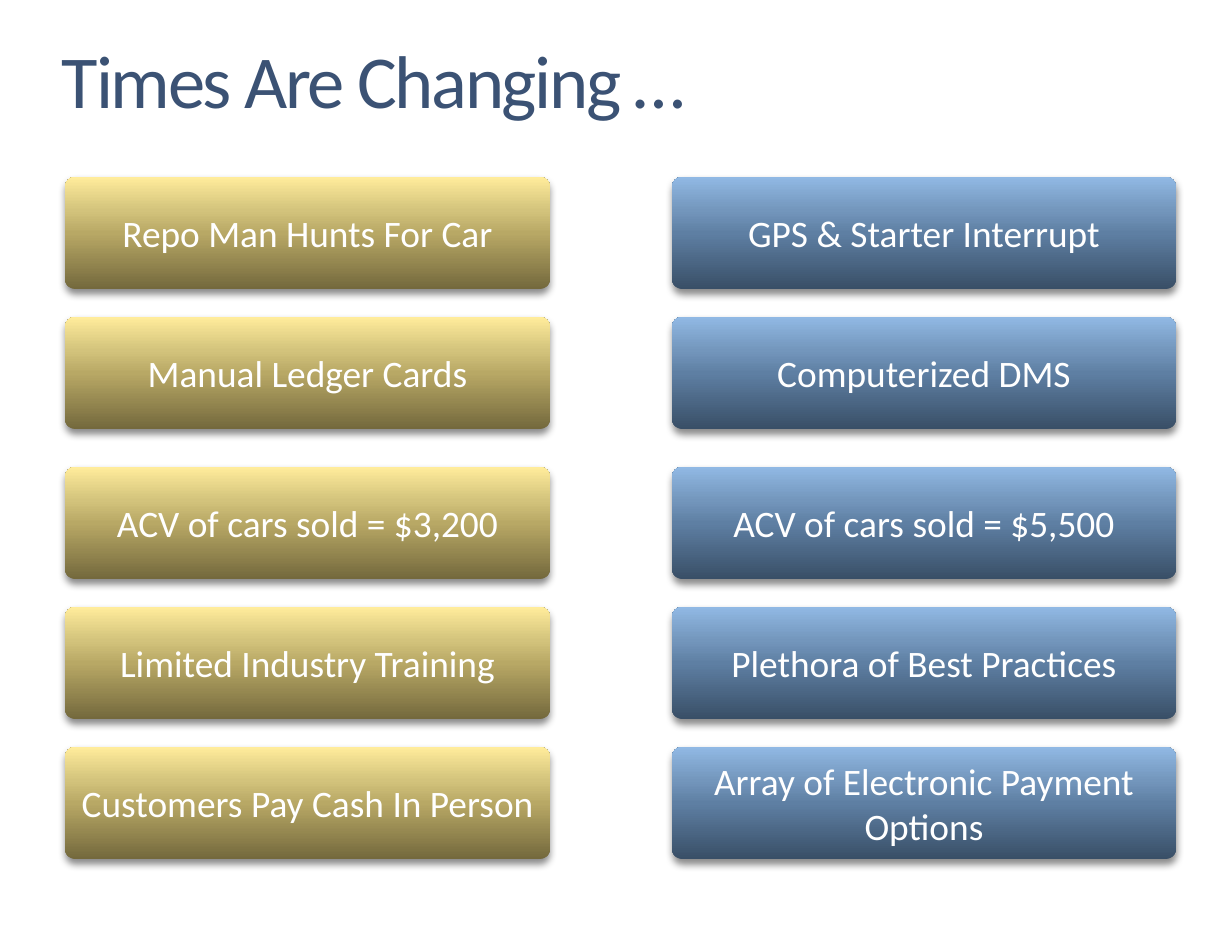
from lxml import etree
from pptx import Presentation
from pptx.dml.color import RGBColor
from pptx.enum.shapes import MSO_SHAPE
from pptx.enum.text import MSO_ANCHOR, MSO_AUTO_SIZE, PP_ALIGN
from pptx.oxml.ns import qn
from pptx.util import Pt

ROUNDED = MSO_SHAPE.ROUNDED_RECTANGLE
TOP, MIDDLE = MSO_ANCHOR.TOP, MSO_ANCHOR.MIDDLE
LEFT, CENTER = PP_ALIGN.LEFT, PP_ALIGN.CENTER
NO_AUTOFIT = MSO_AUTO_SIZE.NONE

SCALE = 914400 / 112
FONT = "Calibri"
STOPS = (0, 50, 70, 100)
GOLD = ("74693D", "B8A865", "D3C37C", "FFEC9B")
BLUE = ("394F67", "5E7FA3", "7396BC", "91B9E4")
ROW_H, PITCH, GROUP_GAP = 112, 140, 10

THEN = ("Repo Man Hunts For Car", "Manual Ledger Cards",
        "ACV of cars sold = $3,200", "Limited Industry Training",
        "Customers Pay Cash In Person")
NOW = ("GPS & Starter Interrupt", "Computerized DMS",
       "ACV of cars sold = $5,500", "Plethora of Best Practices",
       "Array of Electronic Payment Options")


def px(n):
    """Turn pixels into EMU."""
    return round(n * SCALE)


def rgb(value):
    """Turn a hex string into a colour."""
    return RGBColor.from_string(value)


def set_text(tf, text, size, color, align, anchor):
    """Write one formatted paragraph and return it."""
    tf.text = text
    tf.word_wrap = True
    tf.vertical_anchor = anchor
    p = tf.paragraphs[0]
    p.alignment = align
    font = p.runs[0].font
    font.name, font.size = FONT, Pt(size)
    font.color.rgb = rgb(color)
    return p


def add_color(parent, value):
    """Append an RGB colour element and return it."""
    return etree.SubElement(parent, qn("a:srgbClr"), val=value)


def set_gradient(sp, colors):
    """Fill a shape with a gradient rising from bottom to top."""
    sp.fill.gradient()
    sp.fill.gradient_angle = 90
    stops = sp._element.spPr.find(qn("a:gradFill")).find(qn("a:gsLst"))
    stops.clear()
    for pos, color in zip(STOPS, colors):
        add_color(etree.SubElement(stops, qn("a:gs"), pos=str(pos * 1000)), color)


def set_shadow(sp):
    """Give a shape a soft shadow below it."""
    sp.shadow.inherit = False
    effects = sp._element.spPr.find(qn("a:effectLst"))
    shadow = etree.SubElement(effects, qn("a:outerShdw"), blurRad=str(Pt(5)),
                              dist=str(Pt(3)), dir="5400000", rotWithShape="0")
    etree.SubElement(add_color(shadow, "000000"), qn("a:alpha"), val="45000")


def add_title(slide, text, x, y, w, h):
    """Place the slide title."""
    title = slide.shapes.title
    title.left, title.top, title.width, title.height = map(px, (x, y, w, h))
    tf = title.text_frame
    tf.margin_left = tf.margin_right = tf.margin_top = tf.margin_bottom = 0
    tf.auto_size = NO_AUTOFIT
    p = set_text(tf, text, 48, "3B5274", LEFT, TOP)
    p.line_spacing = 0.9
    p.runs[0].font._element.set("spc", "-150")


def add_column(slide, labels, colors, x, y, w):
    """Stack labelled buttons, with a wider gap after the second."""
    for i, label in enumerate(labels):
        top = y + i * PITCH + (GROUP_GAP if i > 1 else 0)
        sp = slide.shapes.add_shape(ROUNDED, px(x), px(top), px(w), px(ROW_H))
        sp.adjustments[0] = 0.09
        set_gradient(sp, colors)
        sp.line.fill.background()
        set_shadow(sp)
        set_text(sp.text_frame, label, 24, "FFFFFF", CENTER, MIDDLE)


def main():
    """Build and save the slide."""
    prs = Presentation()
    prs.slide_width, prs.slide_height = px(1232), px(952)
    slide = prs.slides.add_slide(prs.slide_layouts[5])
    add_title(slide, "Times Are Changing …", 62, 44, 1035, 212)
    add_column(slide, THEN, GOLD, 65, 177, 485)
    add_column(slide, NOW, BLUE, 672, 177, 504)
    prs.save("out.pptx")


if __name__ == "__main__":
    main()
